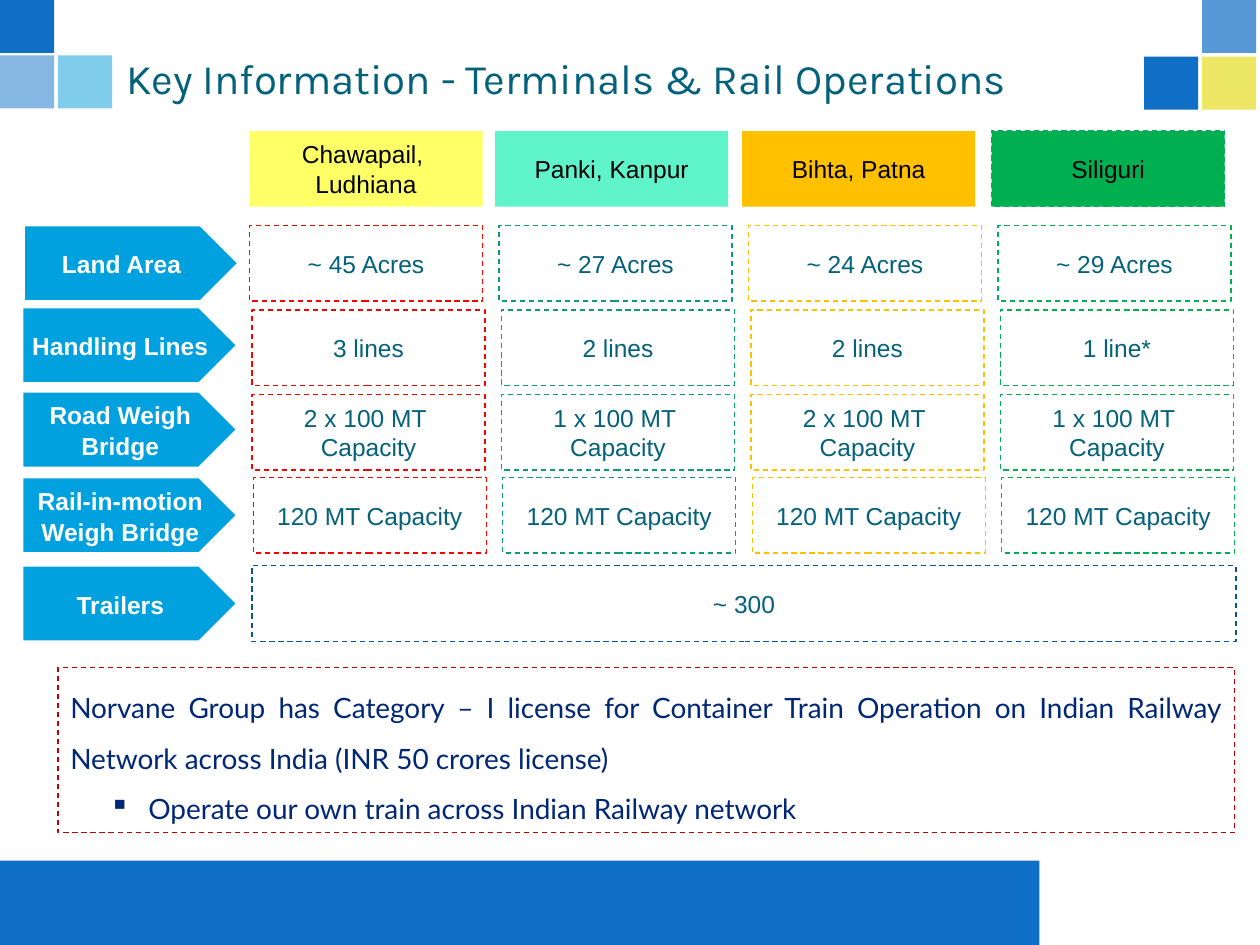
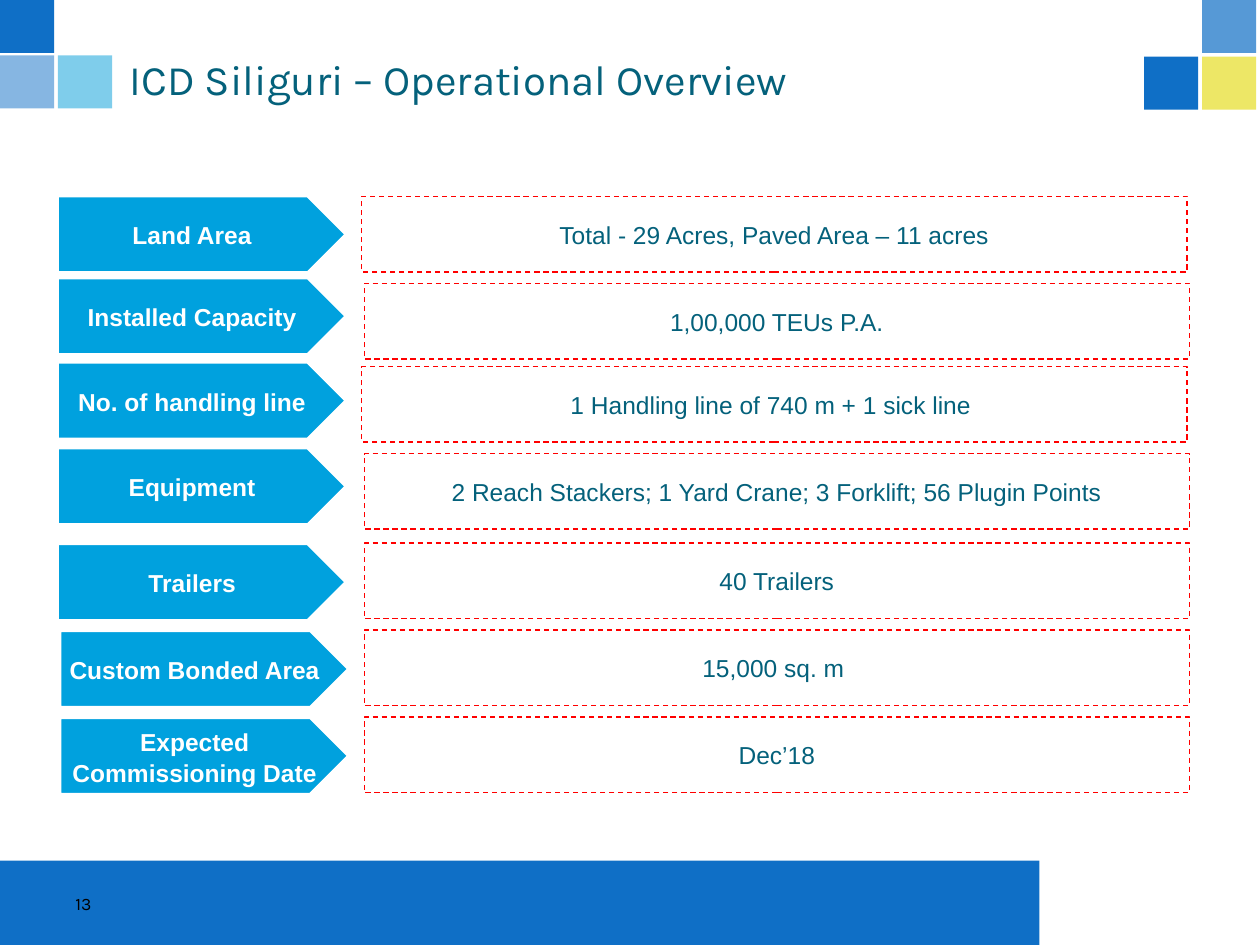
import lxml.etree
import pptx
import pptx.dml.color
import pptx.enum.dml
import pptx.enum.shapes
import pptx.enum.text
import pptx.oxml.ns
import pptx.util

Inches = pptx.util.Inches
Pt = pptx.util.Pt
SHAPE = pptx.enum.shapes.MSO_SHAPE
ALIGN = pptx.enum.text.PP_ALIGN
ANCHOR = pptx.enum.text.MSO_ANCHOR
AUTO_SIZE = pptx.enum.text.MSO_AUTO_SIZE

BLUE, CYAN, YELLOW = "0F6FC6", "009DD9", "E2D700"
TEAL, LABEL_BLUE, NAVY = "04617B", "00A1DE", "002776"
RED, WHITE, BLACK = "FF0000", "FFFFFF", "000000"
ROW_HEIGHT = 0.6

# Left, top, width, height, colour, opacity in percent
DECORATIONS = [
    (0, 6.83, 8.25, 0.67, BLUE, 100),
    (9.54, 0.45, 0.43, 0.42, YELLOW, 60),
    (0.46, 0.44, 0.43, 0.42, CYAN, 50),
    (0, 0, 0.43, 0.42, BLUE, 100),
    (0, 0.44, 0.43, 0.42, BLUE, 50),
    (9.54, 0, 0.43, 0.42, BLUE, 70),
    (9.08, 0.45, 0.43, 0.42, BLUE, 100),
]

# Name, header left, header fill, header line, cell line, values by row
TERMINALS = [
    (["Chawapail, ", "Ludhiana"], 1.98, "FFFF66", None, RED,
     ["~ 45 Acres", "3 lines", ["2 x 100 MT ", "Capacity"], "120 MT Capacity"]),
    ("Panki, Kanpur", 3.93, "5FF3CA", None, "0C9B74",
     ["~ 27 Acres", "2 lines", ["1 x 100 MT ", "Capacity"], "120 MT Capacity"]),
    ("Bihta, Patna", 5.89, "FFC000", None, "FFC000",
     ["~ 24 Acres", "2 lines", ["2 x 100 MT ", "Capacity"], "120 MT Capacity"]),
    ("Siliguri", 7.87, "00B050", "00B050", "00B050",
     ["~ 29 Acres", "1 line*", ["1 x 100 MT ", "Capacity"], "120 MT Capacity"]),
]

# Label, label left, label top, cell top, shift of the cells to the right
TERMINAL_ROWS = [
    ("Land Area", 0.19, 1.79, 1.79, 0),
    ("Handling Lines", 0.18, 2.44, 2.46, 0.02),
    ("Road Weigh Bridge", 0.18, 3.11, 3.13, 0.02),
    ("Rail-in-motion Weigh Bridge", 0.18, 3.79, 3.79, 0.03),
]
TRAILERS = ("Trailers", "~ 300")

LICENSE = ("Norvane Group has Category – I license for Container Train Operation "
           "on Indian Railway Network across India (INR 50 crores license)")
LICENSE_POINT = "Operate our own train across Indian Railway network"

# Label, value, label left, label top, value left, value top
OVERVIEW = [
    ("Land Area", "Total - 29 Acres, Paved Area – 11 acres", 0.46, 1.56, 2.87, 1.56),
    ("Installed Capacity", "1,00,000 TEUs P.A.", 0.46, 2.21, 2.89, 2.25),
    ("No. of handling line", "1 Handling line of 740 m + 1 sick line ", 0.46, 2.88, 2.87, 2.91),
    ("Equipment", "2 Reach Stackers; 1 Yard Crane; 3 Forklift; 56 Plugin Points",
     0.46, 3.56, 2.89, 3.6),
    ("Trailers", "40 Trailers", 0.46, 4.32, 2.89, 4.31),
    ("Custom Bonded Area", "15,000 sq. m ", 0.48, 5.01, 2.89, 5),
    ("Expected Commissioning Date", "Dec’18", 0.48, 5.7, 2.89, 5.69),
]


def rgb(colour):
    return pptx.dml.color.RGBColor.from_string(colour)


def write_text(shape, text, size=14, font="Arial", colour=TEAL, bold=False,
               align=ALIGN.CENTER, anchor=ANCHOR.MIDDLE, wrap=False,
               line_spacing=None, margin=None):
    """Fill a shape with one paragraph per line; text is a string or a list."""
    frame = shape.text_frame
    frame.word_wrap = wrap
    frame.auto_size = AUTO_SIZE.NONE
    frame.vertical_anchor = anchor
    if margin is not None:
        frame.margin_left = frame.margin_right = Inches(margin)
        frame.margin_top = frame.margin_bottom = Inches(margin)
    frame.text = text if isinstance(text, str) else "\n".join(text)
    for paragraph in frame.paragraphs:
        paragraph.alignment = align
        if line_spacing:
            paragraph.line_spacing = line_spacing
        for run in paragraph.runs:
            run.font.size = Pt(size)
            run.font.name = font
            run.font.bold = bold
            run.font.color.rgb = rgb(colour)
    return frame


def add_box(slide, left, top, width, height, fill=None, line=None,
            line_width=0.75, dashed=True, kind=SHAPE.RECTANGLE, opacity=100):
    shape = slide.shapes.add_shape(kind, Inches(left), Inches(top),
                                   Inches(width), Inches(height))
    shape.shadow.inherit = False
    if fill:
        shape.fill.solid()
        shape.fill.fore_color.rgb = rgb(fill)
        if opacity < 100:
            colour = shape.fill._xPr.find(".//" + pptx.oxml.ns.qn("a:srgbClr"))
            lxml.etree.SubElement(colour, pptx.oxml.ns.qn("a:alpha"), val=str(opacity * 1000))
    else:
        shape.fill.background()
    if line:
        shape.line.color.rgb = rgb(line)
        shape.line.width = Pt(line_width)
        if dashed:
            shape.line.dash_style = pptx.enum.dml.MSO_LINE.DASH
    else:
        shape.line.fill.background()
    return shape


def add_label(slide, text, left, top, width):
    label = add_box(slide, left, top, width, ROW_HEIGHT, fill=LABEL_BLUE, line=WHITE,
                    line_width=1, dashed=False, kind=SHAPE.PENTAGON)
    write_text(label, text, colour=WHITE, bold=True, wrap=True, line_spacing=1.06, margin=0.04)


def add_cell(slide, text, left, top, width, line):
    write_text(add_box(slide, left, top, width, ROW_HEIGHT, line=line), text)


def add_titled_slide(presentation, title, left, top, width, height):
    slide = presentation.slides.add_slide(presentation.slide_layouts.get_by_name("Title Only"))
    for *place, colour, opacity in DECORATIONS:
        add_box(slide, *place, fill=colour, opacity=opacity)
    shape = slide.shapes.title
    shape.left, shape.top = Inches(left), Inches(top)
    shape.width, shape.height = Inches(width), Inches(height)
    write_text(shape, title, size=24, font="Karla", align=ALIGN.LEFT, wrap=True)
    return slide


def add_license_note(slide):
    note = add_box(slide, 0.46, 5.3, 9.34, 1.31, line="C00000")
    frame = write_text(note, [LICENSE, LICENSE_POINT], size=16, font="Lato", colour=NAVY,
                       align=ALIGN.JUSTIFY, anchor=ANCHOR.TOP, wrap=True, line_spacing=1.5)
    frame.auto_size = AUTO_SIZE.SHAPE_TO_FIT_TEXT
    point = frame.paragraphs[1]
    point.level = 1
    properties = point._p.get_or_add_pPr()
    properties.set("marL", str(Inches(0.62)))
    properties.set("indent", str(Inches(-0.31)))
    lxml.etree.SubElement(properties, pptx.oxml.ns.qn("a:buChar"), char="▪")


def build_terminals(presentation):
    slide = add_titled_slide(presentation, "Key Information - Terminals & Rail Operations",
                             0.9, 0.31, 8.1, 0.62)
    label_width, cell_width, column_step = 1.7, 1.85, 1.98
    for label, left, top, *_ in TERMINAL_ROWS:
        add_label(slide, label, left, top, label_width)
    for column, (name, left, fill, header_line, line, values) in enumerate(TERMINALS, 1):
        header = add_box(slide, left, 1.04, cell_width, ROW_HEIGHT, fill=fill, line=header_line)
        write_text(header, name, colour=BLACK)
        for value, (*_, top, shift) in zip(values, TERMINAL_ROWS):
            add_cell(slide, value, column * column_step + shift, top, cell_width, line)
    label, value = TRAILERS
    add_label(slide, label, 0.18, 4.49, label_width)
    add_cell(slide, value, 2, 4.49, 7.81, "0B5394")
    add_license_note(slide)


def build_overview(presentation):
    slide = add_titled_slide(presentation, "ICD Siliguri – Operational Overview",
                             0.93, 0.44, 9.05, 0.37)
    for label, value, label_left, label_top, value_left, value_top in OVERVIEW:
        add_label(slide, label, label_left, label_top, 2.28)
        add_cell(slide, value, value_left, value_top, 6.55, RED)
    number = slide.shapes.add_textbox(Inches(0.5), Inches(7.04), Inches(2.5), Inches(0.33))
    write_text(number, "13", size=10, font="Karla", colour=BLACK, align=ALIGN.LEFT,
               anchor=ANCHOR.TOP, wrap=True)


def main():
    presentation = pptx.Presentation()
    presentation.slide_width, presentation.slide_height = Inches(10), Inches(7.5)
    build_terminals(presentation)
    build_overview(presentation)
    presentation.save("out.pptx")


if __name__ == "__main__":
    main()
